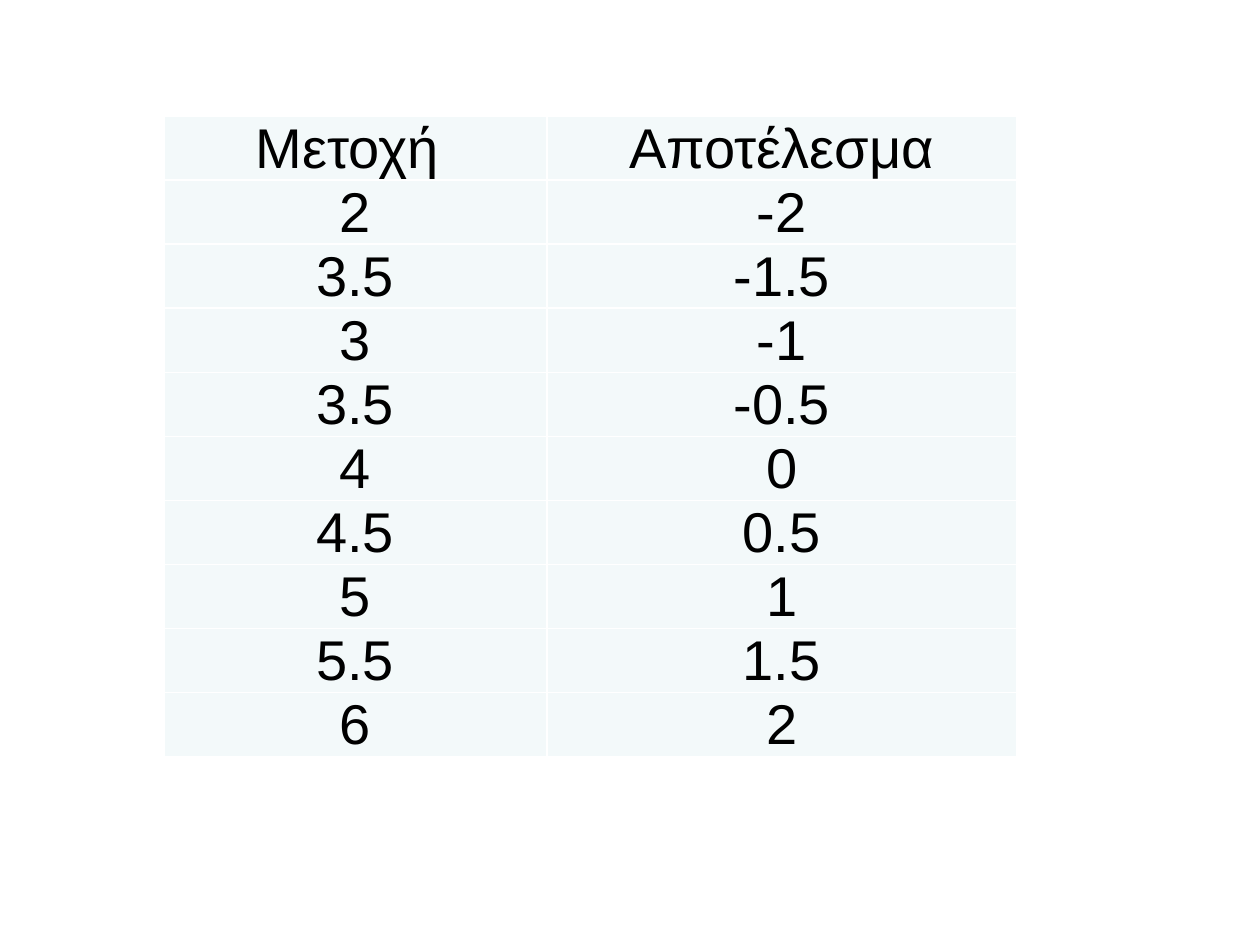
from lxml import etree
from pptx import Presentation
from pptx.dml.color import RGBColor
from pptx.enum.text import MSO_ANCHOR, PP_ALIGN
from pptx.oxml.ns import qn
from pptx.util import Inches, Pt

CENTER = PP_ALIGN.CENTER
BOTTOM = MSO_ANCHOR.BOTTOM
BLACK = RGBColor(0x00, 0x00, 0x00)
WHITE = RGBColor(0xFF, 0xFF, 0xFF)
PALE = RGBColor(0xF3, 0xF9, 0xFA)

RESULTS = [
    ("Μετοχή ", "Αποτέλεσμα"),
    ("2", "-2"),
    ("3.5", "-1.5"),
    ("3", "-1"),
    ("3.5", "-0.5"),
    ("4", "0"),
    ("4.5", "0.5"),
    ("5", "1"),
    ("5.5", "1.5"),
    ("6", "2"),
]


class PageBuilder:
    font = "Arial"
    size = Pt(32)
    border_width = Pt(1)
    inset = Inches(0.01)

    def __init__(self, page):
        self.page = page

    def add_table(self, rows, left, top, height, column_widths, row_height):
        frame = self.page.shapes.add_table(
            len(rows), len(column_widths), left, top, sum(column_widths), height)
        table = frame.table
        for column, width in zip(table.columns, column_widths):
            column.width = width
        for row, values in zip(table.rows, rows):
            row.height = row_height
            for cell, value in zip(row.cells, values):
                self.fill_cell(cell, value)
        frame.height = height

    def fill_cell(self, cell, value):
        cell.margin_left = cell.margin_top = cell.margin_right = self.inset
        cell.margin_bottom = 0
        cell.vertical_anchor = BOTTOM
        self.add_borders(cell)
        cell.fill.solid()
        cell.fill.fore_color.rgb = PALE
        cell.text_frame.text = value
        para = cell.text_frame.paragraphs[0]
        para.alignment = CENTER
        for span in para.runs:
            span.font.name = self.font
            span.font.size = self.size
            span.font.bold = False
            span.font.color.rgb = BLACK

    def add_borders(self, cell):
        """Borders must come before the fill in the cell properties."""
        properties = cell._tc.get_or_add_tcPr()
        for side in ("a:lnL", "a:lnR", "a:lnT", "a:lnB"):
            line = etree.SubElement(properties, qn(side), w=str(self.border_width))
            fill = etree.SubElement(line, qn("a:solidFill"))
            etree.SubElement(fill, qn("a:srgbClr"), val=str(WHITE))


def main():
    deck = Presentation()
    deck.slide_width, deck.slide_height = Inches(10), Inches(7.5)
    builder = PageBuilder(deck.slides.add_slide(deck.slide_layouts[6]))
    builder.add_table(
        RESULTS, Inches(1.3), Inches(0.92), Inches(5.4),
        column_widths=[Inches(3.04), Inches(3.73)], row_height=Inches(0.37))
    deck.save("out.pptx")


if __name__ == "__main__":
    main()
